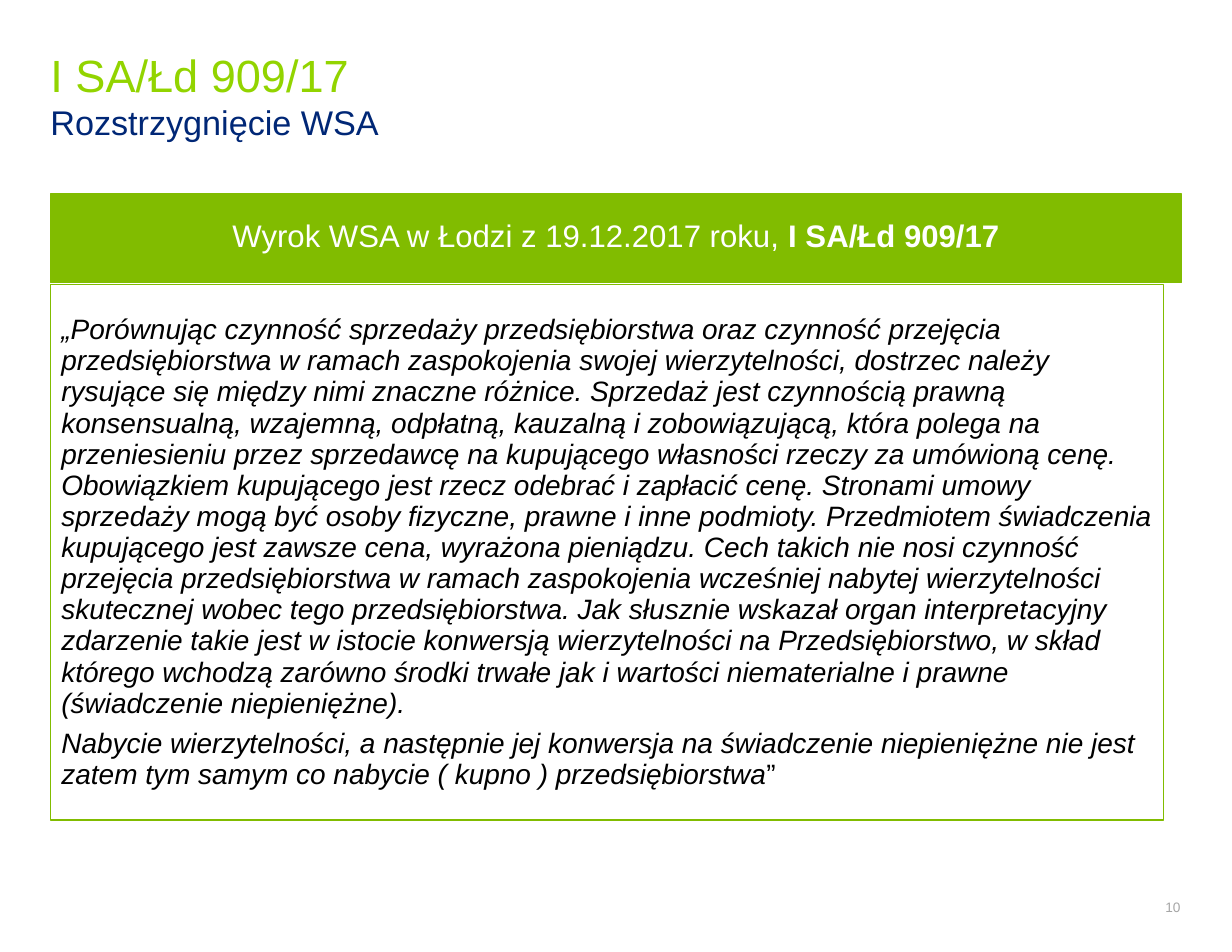
from pptx import Presentation
from pptx.dml.color import RGBColor
from pptx.enum.shapes import MSO_SHAPE
from pptx.enum.text import MSO_ANCHOR, MSO_AUTO_SIZE, PP_ALIGN
from pptx.util import Pt

RECTANGLE = MSO_SHAPE.RECTANGLE
MIDDLE = MSO_ANCHOR.MIDDLE
NO_AUTOFIT = MSO_AUTO_SIZE.NONE
LEFT, CENTER, RIGHT = PP_ALIGN.LEFT, PP_ALIGN.CENTER, PP_ALIGN.RIGHT

LIME = RGBColor(0x92, 0xD4, 0x00)
GREEN = RGBColor(0x81, 0xBC, 0x00)
NAVY = RGBColor(0x00, 0x27, 0x76)
GRAY = RGBColor(0xA6, 0xA6, 0xA6)
WHITE = RGBColor(0xFF, 0xFF, 0xFF)
BLACK = RGBColor(0x00, 0x00, 0x00)

FONT = "Arial"
MARGIN = 32.4
PANEL_SPACING = {"line_spacing": Pt(20), "space_after": Pt(6)}

CASE_NUMBER = "I SA/Łd 909/17"
QUOTE_SENTENCES = [
    "„Porównując czynność sprzedaży przedsiębiorstwa oraz czynność przejęcia "
    "przedsiębiorstwa w ramach zaspokojenia swojej wierzytelności, dostrzec należy "
    "rysujące się między nimi znaczne różnice.",
    "Sprzedaż jest czynnością prawną konsensualną, wzajemną, odpłatną, kauzalną i "
    "zobowiązującą, która polega na przeniesieniu przez sprzedawcę na kupującego "
    "własności rzeczy za umówioną cenę.",
    "Obowiązkiem kupującego jest rzecz odebrać i zapłacić cenę.",
    "Stronami umowy sprzedaży mogą być osoby fizyczne, prawne i inne podmioty.",
    "Przedmiotem świadczenia kupującego jest zawsze cena, wyrażona pieniądzu.",
    "Cech takich nie nosi czynność przejęcia przedsiębiorstwa w ramach zaspokojenia "
    "wcześniej nabytej wierzytelności skutecznej wobec tego przedsiębiorstwa.",
    "Jak słusznie wskazał organ interpretacyjny zdarzenie takie jest w istocie "
    "konwersją wierzytelności na Przedsiębiorstwo, w skład którego wchodzą zarówno "
    "środki trwałe jak i wartości niematerialne i prawne (świadczenie niepieniężne).",
]
CONCLUSION = (
    "Nabycie wierzytelności, a następnie jej konwersja na świadczenie niepieniężne "
    "nie jest zatem tym samym co nabycie ( kupno ) przedsiębiorstwa"
)


def set_values(target, values):
    for name, value in values.items():
        setattr(target, name, value)


def place(shape, box):
    set_values(shape, dict(zip(("left", "top", "width", "height"), map(Pt, box))))


def format_frame(frame, inset):
    set_values(frame, {"word_wrap": True, "auto_size": NO_AUTOFIT,
                       "vertical_anchor": MIDDLE})
    for side in ("left", "top", "right", "bottom"):
        setattr(frame, f"margin_{side}", Pt(inset))


def add_span(para, text, size, color, **style):
    span = para.add_run()
    span.text = text
    set_values(span.font, {"name": FONT, "size": Pt(size), **style})
    span.font.color.rgb = color


def add_title(page, box):
    title = page.shapes.title
    place(title, box)
    format_frame(title.text_frame, 0)
    para = title.text_frame.paragraphs[0]
    para.alignment = LEFT
    add_span(para, CASE_NUMBER, 29, LIME)
    para.add_line_break()
    add_span(para, "Rozstrzygnięcie WSA", 22, NAVY)


def add_page_number(page, box):
    number = page.shapes.add_textbox(*map(Pt, box))
    format_frame(number.text_frame, 0)
    para = number.text_frame.paragraphs[0]
    para.alignment = RIGHT
    add_span(para, "10", 8.8, GRAY)


def add_panel(page, box, fill, alignment, size, color, paragraphs):
    """Each paragraph is a list of (text, font style) pairs."""
    panel = page.shapes.add_shape(RECTANGLE, *map(Pt, box))
    panel.shadow.inherit = False
    panel.fill.solid()
    panel.fill.fore_color.rgb = fill
    panel.line.color.rgb = GREEN
    panel.line.width = Pt(1)
    frame = panel.text_frame
    format_frame(frame, 7.2)
    for index, spans in enumerate(paragraphs):
        para = frame.add_paragraph() if index else frame.paragraphs[0]
        set_values(para, {"alignment": alignment, **PANEL_SPACING})
        for text, style in spans:
            add_span(para, text, size, color, **style)


def main():
    deck = Presentation()
    set_values(deck, {"slide_width": Pt(792), "slide_height": Pt(612)})
    page = deck.slides.add_slide(deck.slide_layouts[5])

    # Title and page number
    add_title(page, (MARGIN, 22.3, 726.5, 77))
    add_page_number(page, (690.5, 571.7, 68.4, 22.3))

    # Ruling heading
    add_panel(page, (MARGIN, 124.6, 727.2, 56.9), GREEN, CENTER, 20, WHITE,
              [[("Wyrok WSA w Łodzi z 19.12.2017 roku, ", {}),
                (CASE_NUMBER, {"bold": True})]])

    # Quotation from the ruling
    italic = {"italic": True}
    add_panel(page, (MARGIN, 182.9, 715.7, 344.2), WHITE, LEFT, 18, BLACK,
              [[(" ".join(QUOTE_SENTENCES), italic)],
               [(CONCLUSION, italic), ("”", {"italic": False})]])

    deck.save("out.pptx")


if __name__ == "__main__":
    main()
